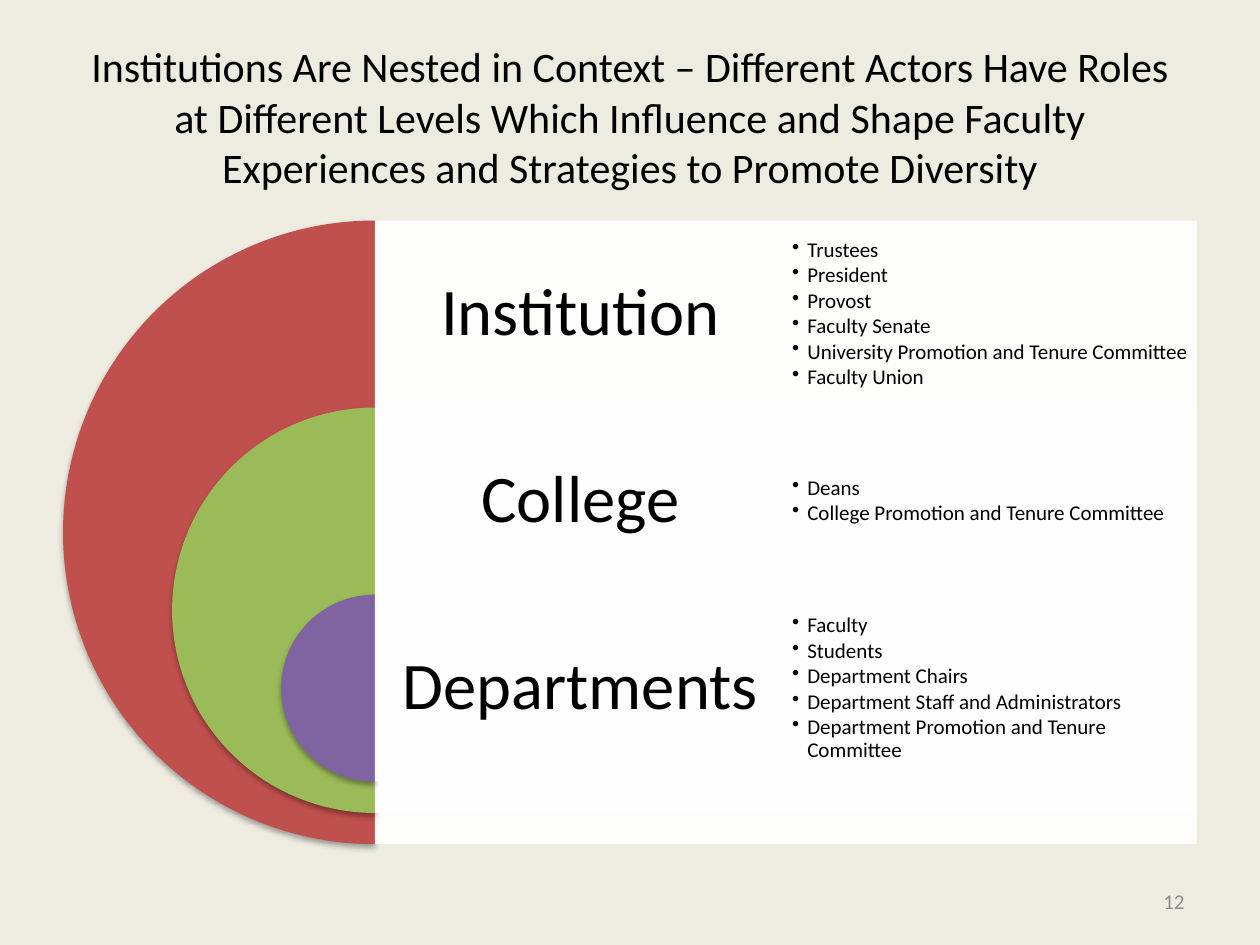
import pptx
import pptx.dml.color
import pptx.enum.shapes
import pptx.enum.text
import pptx.oxml
import pptx.oxml.ns
import pptx.util
from dataclasses import dataclass
from pptx.util import Inches

ALIGN = pptx.enum.text.PP_ALIGN
SHAPES = pptx.enum.shapes.MSO_SHAPE
NS = pptx.oxml.ns.nsdecls("a")


@dataclass(frozen=True)
class Theme:
    font: str = "Calibri"
    background: str = "EEECE1"
    text: str = "000000"
    muted: str = "8C8C8C"
    panel: str = "FFFFFF"
    panel_opacity: int = 90
    title_size: int = 24
    level_size: int = 38
    small_size: int = 12


THEME = Theme()

TITLE = ("Institutions Are Nested in Context – Different Actors Have Roles "
         "at Different Levels Which Influence and Shape Faculty "
         "Experiences and Strategies to Promote Diversity")

# Level name, arc colour, diameter relative to the outer arc, actors
LEVELS = [
    ("Institution", "C0504D", 1, [
        "Trustees", "President", "Provost", "Faculty Senate",
        "University Promotion and Tenure Committee", "Faculty Union"]),
    ("College", "9BBB59", 0.65, [
        "Deans", "College Promotion and Tenure Committee"]),
    ("Departments", "8064A2", 0.3, [
        "Faculty", "Students", "Department Chairs",
        "Department Staff and Administrators",
        "Department Promotion and Tenure Committee"]),
]

# Diagram geometry in inches
LEFT, TOP, RIGHT = 0.5, 1.75, 9.5
DIAMETER = 4.95
CENTER = LEFT + DIAMETER / 2
ROW = DIAMETER * 0.3
COLUMN = (RIGHT - CENTER) / 2


def rgb(value):
    return pptx.dml.color.RGBColor.from_string(value)


def write(frame, lines, size, color=THEME.text, align=ALIGN.CENTER):
    frame.word_wrap = True
    frame.vertical_anchor = pptx.enum.text.MSO_ANCHOR.MIDDLE
    frame.text = "\n".join(lines)
    for paragraph in frame.paragraphs:
        paragraph.alignment = align
        for run in paragraph.runs:
            run.font.name = THEME.font
            run.font.size = pptx.util.Pt(size)
            run.font.color.rgb = rgb(color)


def add_text(slide, box, inset, lines, size, **style):
    frame = slide.shapes.add_textbox(*map(Inches, box)).text_frame
    frame.margin_left = frame.margin_right = Inches(inset)
    frame.margin_top = frame.margin_bottom = Inches(inset)
    write(frame, lines, size, **style)
    return frame


def add_filled(slide, kind, box, color):
    shape = slide.shapes.add_shape(kind, *map(Inches, box))
    shape.shadow.inherit = False
    shape.fill.solid()
    shape.fill.fore_color.rgb = rgb(color)
    shape.line.fill.background()
    return shape


def add_half_circle(slide, top, diameter, color):
    box = (CENTER - diameter / 2, top, diameter, diameter)
    arc = add_filled(slide, SHAPES.PIE, box, color)
    # Angles of 90 and 270 degrees leave the left half
    arc.adjustments[0], arc.adjustments[1] = 54, 162
    effects = arc._element.spPr.find(pptx.oxml.ns.qn("a:effectLst"))
    effects.append(pptx.oxml.parse_xml(
        f'<a:outerShdw {NS} blurRad="40000" dist="23000" dir="5400000" '
        'rotWithShape="0"><a:srgbClr val="000000"><a:alpha val="35000"/>'
        '</a:srgbClr></a:outerShdw>'))


def add_panel(slide, top, height):
    box = (CENTER, top, RIGHT - CENTER, height)
    panel = add_filled(slide, SHAPES.RECTANGLE, box, THEME.panel)
    color = panel._element.spPr.find(
        f'{pptx.oxml.ns.qn("a:solidFill")}/{pptx.oxml.ns.qn("a:srgbClr")}')
    color.append(pptx.oxml.parse_xml(
        f'<a:alpha {NS} val="{THEME.panel_opacity * 1000}"/>'))


def add_actors(slide, top, actors):
    frame = add_text(slide, (CENTER + COLUMN, top, COLUMN, ROW), 0.05,
                     actors, THEME.small_size, align=ALIGN.LEFT)
    indent = Inches(0.12)
    for paragraph in frame.paragraphs:
        paragraph.level = 1
        paragraph.line_spacing = 0.9
        paragraph.space_after = pptx.util.Pt(1.6)
        properties = paragraph._p.get_or_add_pPr()
        properties.set("marL", str(indent))
        properties.set("indent", str(-indent))
        properties.append(pptx.oxml.parse_xml(f'<a:buChar {NS} char="•"/>'))


def main():
    deck = pptx.Presentation()
    deck.slide_width, deck.slide_height = Inches(10), Inches(7.5)
    slide = deck.slides.add_slide(deck.slide_layouts[5])
    slide.background.fill.solid()
    slide.background.fill.fore_color.rgb = rgb(THEME.background)

    # Title
    title = slide.shapes.title
    title.left, title.top = Inches(0.5), Inches(0.3)
    title.width, title.height = Inches(9), Inches(1.25)
    write(title.text_frame, [TITLE], THEME.title_size)

    # Nested levels, outermost first
    tops = [TOP + ROW * i for i in range(len(LEVELS))]
    for top, (name, color, scale, _) in zip(tops, LEVELS):
        add_half_circle(slide, top, DIAMETER * scale, color)
        add_panel(slide, top, DIAMETER * scale)
        label = add_text(slide, (CENTER, top, COLUMN, ROW), 0.16,
                         [name], THEME.level_size)
        label.paragraphs[0].line_spacing = 0.9

    # Actors at each level
    for top, (_, _, _, actors) in zip(tops, LEVELS):
        add_actors(slide, top, actors)

    # Page number
    add_text(slide, (7.17, 6.95, 2.33, 0.4), 0.1, ["12"],
             THEME.small_size, color=THEME.muted, align=ALIGN.RIGHT)

    deck.save("out.pptx")


if __name__ == "__main__":
    main()
